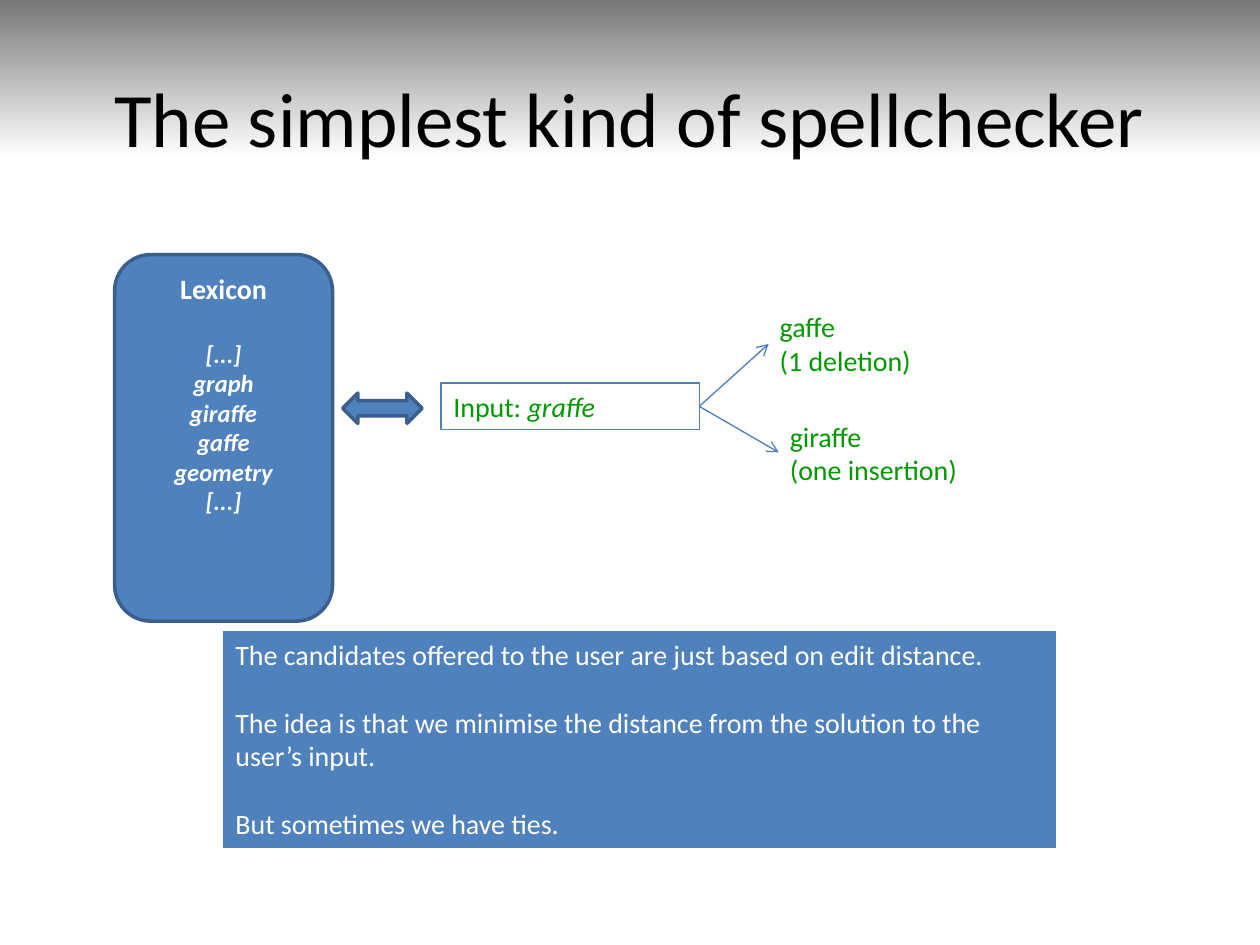
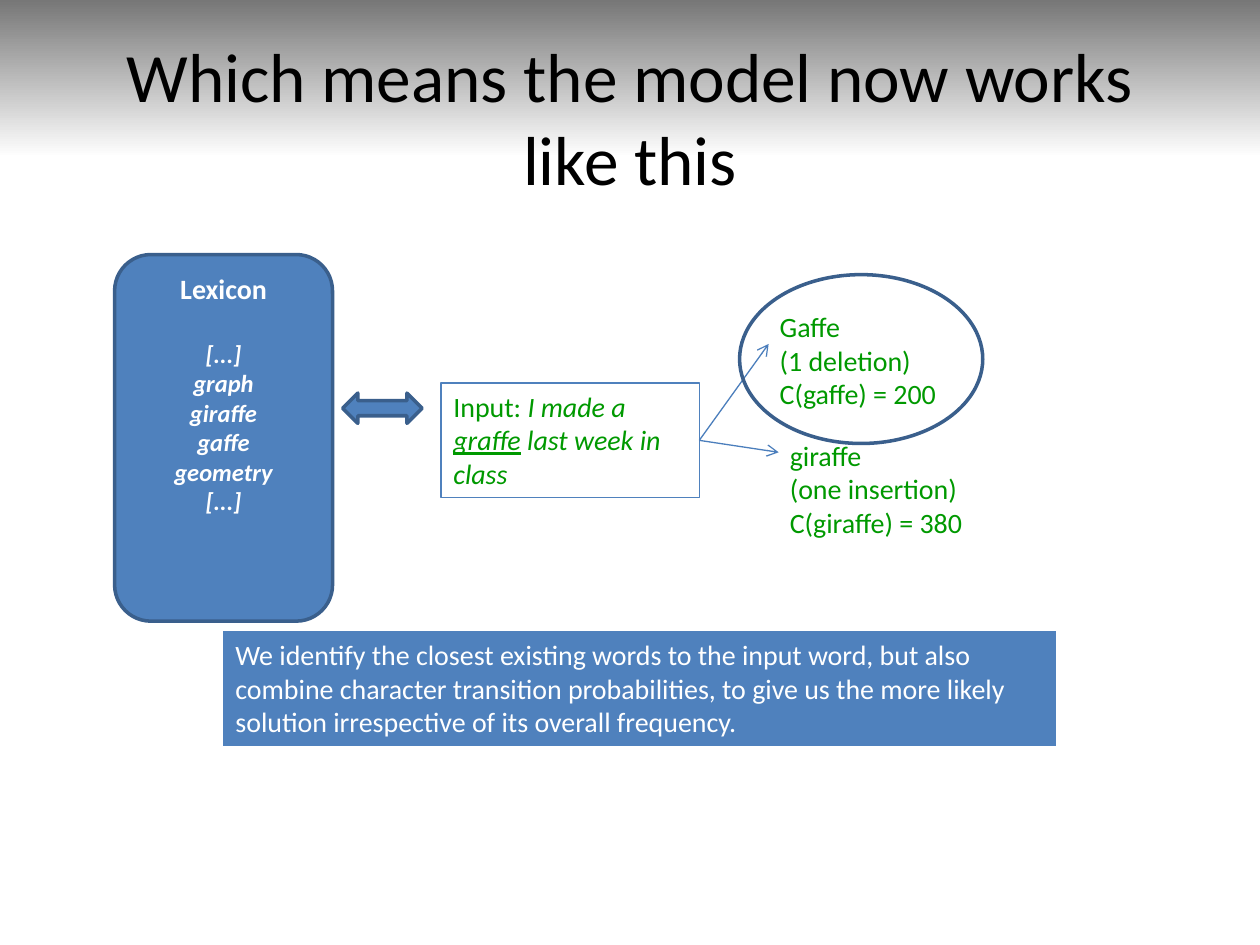
from dataclasses import dataclass

from lxml import etree
from pptx import Presentation
from pptx.dml.color import RGBColor
from pptx.enum.shapes import MSO_CONNECTOR, MSO_SHAPE
from pptx.enum.text import MSO_ANCHOR, MSO_AUTO_SIZE, PP_ALIGN
from pptx.oxml.ns import qn
from pptx.util import Inches, Pt

RECT = MSO_SHAPE.RECTANGLE
ROUNDED = MSO_SHAPE.ROUNDED_RECTANGLE
DOUBLE_ARROW = MSO_SHAPE.LEFT_RIGHT_ARROW
OVAL = MSO_SHAPE.OVAL
STRAIGHT = MSO_CONNECTOR.STRAIGHT
TOP, MIDDLE = MSO_ANCHOR.TOP, MSO_ANCHOR.MIDDLE
GROW = MSO_AUTO_SIZE.SHAPE_TO_FIT_TEXT
LEFT, CENTER = PP_ALIGN.LEFT, PP_ALIGN.CENTER


@dataclass(frozen=True)
class Theme:
    font: str = "Calibri"
    black: str = "000000"
    white: str = "FFFFFF"
    band: str = "777777"
    blue: str = "4F81BD"
    outline: str = "3A5F8C"
    pointer: str = "4B7EBC"
    green: str = "009900"
    title: float = 44
    body: float = 16
    word: float = 14
    gap: float = 19.5
    thick: float = 2
    thin: float = 0.75


THEME = Theme()
TITLE_BOX = (0.5, 0.3, 9, 1.25)
LEXICON_BOX = (0.91, 2.02, 1.73, 2.91)
LOOKUP_BOX = (2.72, 3.12, 0.63, 0.24)
POINTER_TIPS = ((6.1, 2.73), (6.18, 3.59))
LEXICON_WORDS = ("[...]", "graph", "giraffe", "gaffe", "geometry", "[...]")


def rgb(code):
    return RGBColor.from_string(code)


def add_box(slide, kind, box, fill=None, line=None, width=THEME.thick):
    shape = slide.shapes.add_shape(kind, *map(Inches, box))
    shape.shadow.inherit = False
    if fill:
        shape.fill.solid()
        shape.fill.fore_color.rgb = rgb(fill)
    else:
        shape.fill.background()
    if line:
        shape.line.color.rgb = rgb(line)
        shape.line.width = Pt(width)
    else:
        shape.line.fill.background()
    return shape


def set_lines(shape, lines, color, size=THEME.body, align=LEFT, anchor=TOP, wrap=True):
    frame = shape.text_frame
    frame.text = "\n".join(lines)
    frame.word_wrap = wrap
    frame.vertical_anchor = anchor
    for paragraph in frame.paragraphs:
        paragraph.alignment = align
        for run in paragraph.runs:
            style_run(run, color, size)
    return frame


def style_run(run, color, size, **styles):
    run.font.name = THEME.font
    run.font.size = Pt(size)
    run.font.color.rgb = rgb(color)
    for style, value in styles.items():
        setattr(run.font, style, value)


def add_header(slide, title, size):
    band = add_box(slide, RECT, (0, 0, 10, 1.25))
    band.fill.gradient()
    band.fill.gradient_angle = 270
    for stop, position, color in zip(
        band.fill.gradient_stops, (0, 1), (THEME.band, THEME.white)
    ):
        stop.position = position
        stop.color.rgb = rgb(color)
    heading = slide.shapes.add_textbox(*map(Inches, TITLE_BOX))
    set_lines(heading, [title], THEME.black, size, CENTER, MIDDLE)


def add_lexicon(slide, box):
    lexicon = add_box(slide, ROUNDED, box, THEME.blue, THEME.outline)
    frame = set_lines(
        lexicon, ("Lexicon", *LEXICON_WORDS), THEME.white, THEME.word, CENTER
    )
    heading, *words = frame.paragraphs
    style_run(heading.runs[0], THEME.white, THEME.body, bold=True)
    words[0].space_before = Pt(THEME.gap)
    for word in words:
        style_run(word.runs[0], THEME.white, THEME.word, bold=True, italic=True)


def add_input(slide, box, parts):
    entry = add_box(slide, RECT, box, line=THEME.blue, width=THEME.thin)
    frame = set_lines(entry, [], THEME.green)
    frame.auto_size = GROW
    for text, styles in parts:
        run = frame.paragraphs[0].add_run()
        run.text = text
        style_run(run, THEME.green, THEME.body, **styles)


def add_pointer(slide, start, tip):
    pointer = slide.shapes.add_connector(STRAIGHT, *map(Inches, (*start, *tip)))
    pointer.line.color.rgb = rgb(THEME.pointer)
    pointer.line.width = Pt(THEME.thin)
    etree.SubElement(pointer.line._get_or_add_ln(), qn("a:tailEnd"), type="arrow")
    etree.SubElement(pointer._element.spPr, qn("a:effectLst"))


def add_candidate(slide, box, lines):
    candidate = slide.shapes.add_textbox(*map(Inches, box))
    set_lines(candidate, lines, THEME.green, wrap=False).auto_size = GROW


def add_explanation(slide, box, statements):
    explanation = add_box(slide, RECT, box, THEME.blue)
    frame = set_lines(explanation, statements, THEME.white)
    frame.auto_size = GROW
    for paragraph in frame.paragraphs[1:]:
        paragraph.space_before = Pt(THEME.gap)


def add_model_slide(
    deck, title, input_height, input_parts, candidates, explanation_height,
    statements, title_size=THEME.title, favourite_box=None,
):
    slide = deck.slides.add_slide(deck.slide_layouts[6])
    add_header(slide, title, title_size)
    add_lexicon(slide, LEXICON_BOX)
    left, top, width = 3.5, 3.04, 2.05
    add_input(slide, (left, top, width, input_height), input_parts)
    add_box(slide, DOUBLE_ARROW, LOOKUP_BOX, THEME.blue, THEME.outline)
    for tip in POINTER_TIPS:
        add_pointer(slide, (left + width, top + input_height / 2), tip)
    for box, lines in candidates:
        add_candidate(slide, box, lines)
    add_explanation(slide, (1.77, 5.01, 6.61, explanation_height), statements)
    if favourite_box:
        add_box(slide, OVAL, favourite_box, line=THEME.outline)


def main():
    deck = Presentation()
    deck.slide_width, deck.slide_height = Inches(10), Inches(7.5)
    italic = {"italic": True}
    add_model_slide(
        deck,
        "The simplest kind of spellchecker",
        0.37,
        (("Input: ", {}), ("graffe", italic)),
        (
            ((6.09, 2.41, 1.26, 0.64), ("gaffe", "(1 deletion)")),
            ((6.17, 3.28, 1.55, 0.64), ("giraffe", "(one insertion)")),
        ),
        1.72,
        (
            "The candidates offered to the user are just based on edit distance.",
            "The idea is that we minimise the distance from the solution to the "
            "user’s input.",
            "But sometimes we have ties.",
        ),
    )
    add_model_slide(
        deck,
        "Which means the model now works like this",
        0.91,
        (
            ("Input: ", {}),
            ("I made a ", italic),
            ("graffe", {"italic": True, "underline": True}),
            (" last week in class", italic),
        ),
        (
            ((6.09, 2.41, 1.46, 0.91), ("Gaffe", "(1 deletion)", "C(gaffe) = 200")),
            (
                (6.17, 3.43, 1.59, 0.91),
                ("giraffe", "(one insertion)", "C(giraffe) = 380"),
            ),
        ),
        0.91,
        (
            "We identify the closest existing words to the input word, but also "
            "combine character transition probabilities, to give us the more likely "
            "solution irrespective of its overall frequency.",
        ),
        title_size=39.6,
        favourite_box=(5.87, 2.18, 1.93, 1.34),
    )
    deck.save("out.pptx")


if __name__ == "__main__":
    main()
